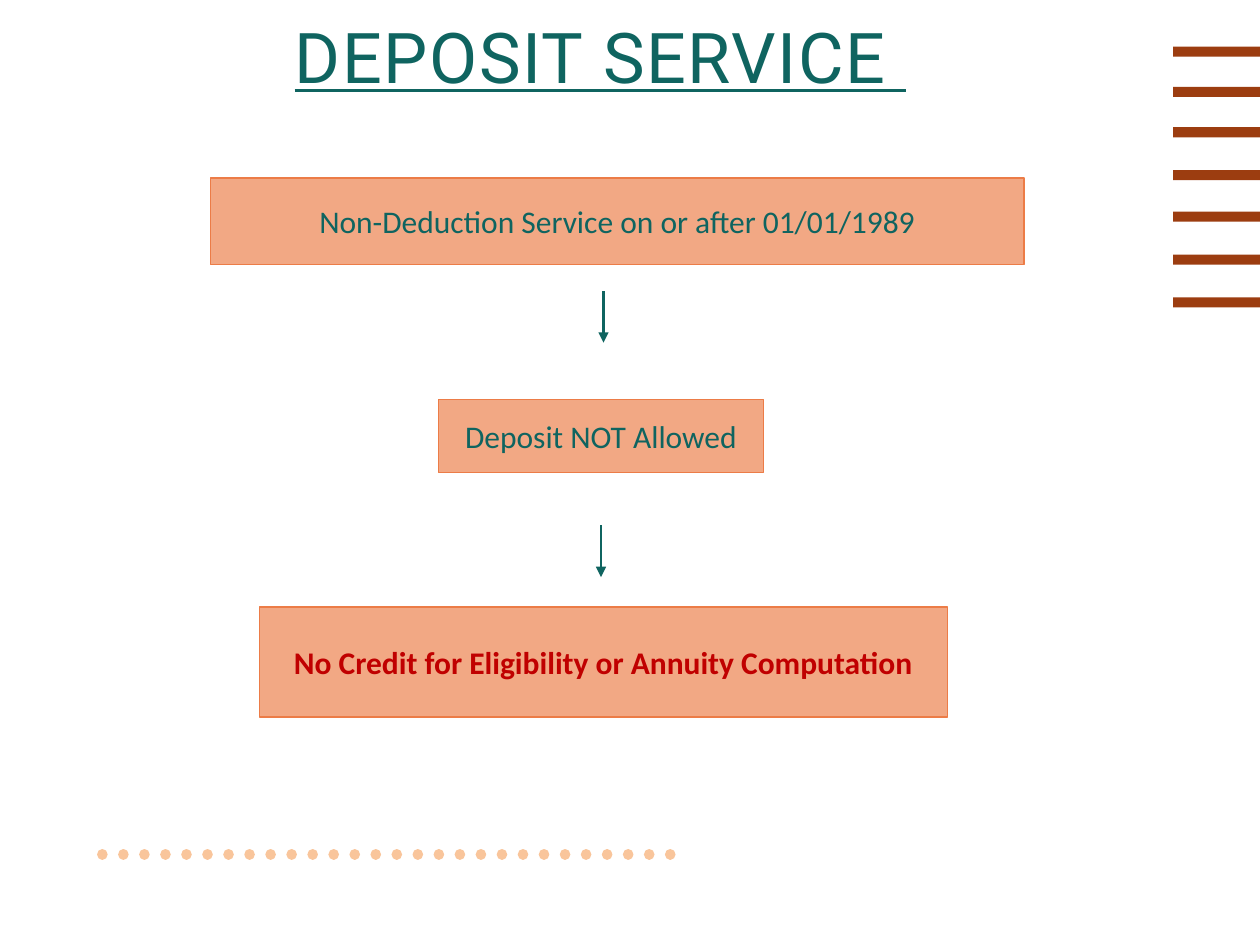
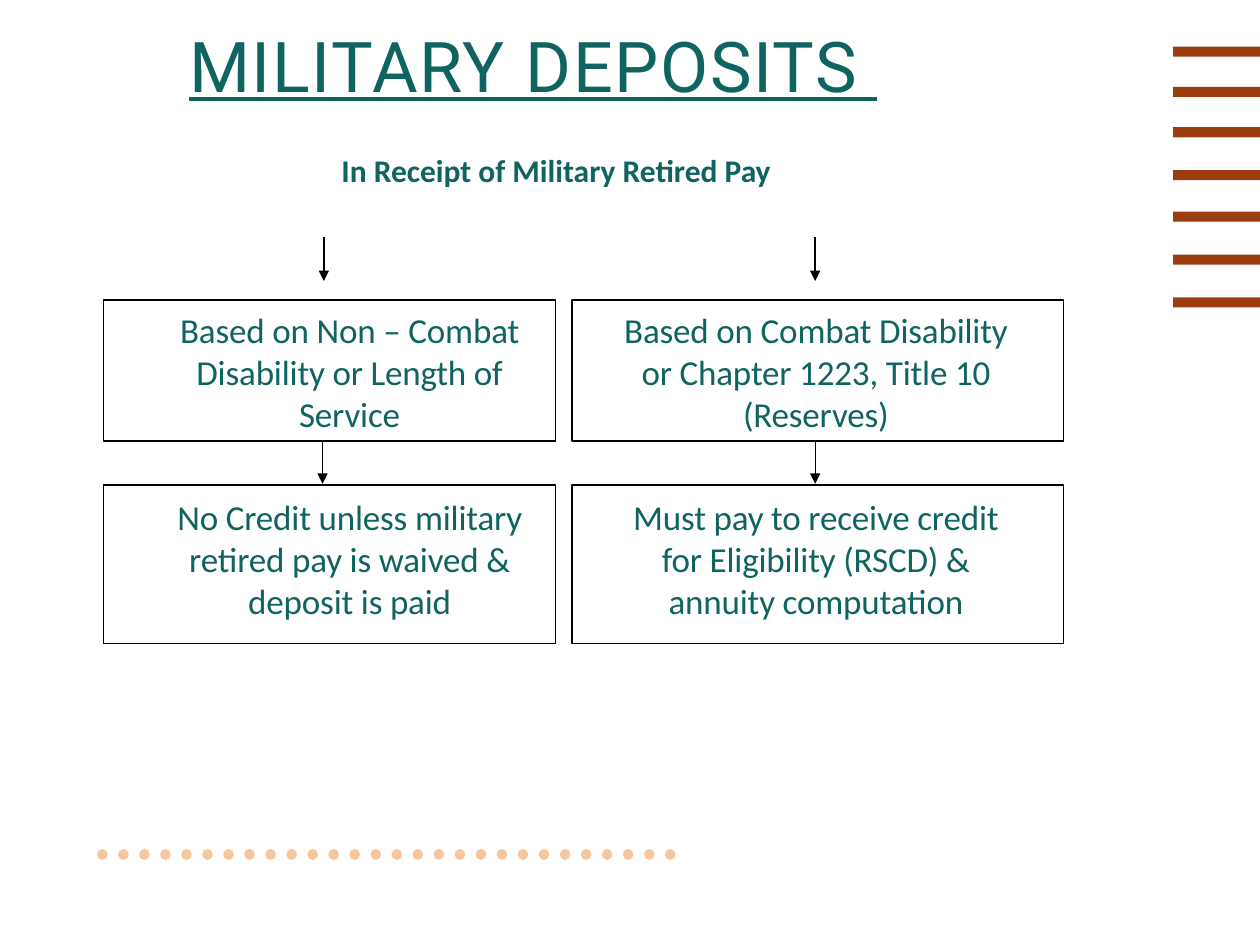
from lxml import etree
from pptx import Presentation
from pptx.dml.color import RGBColor
from pptx.enum import dml, shapes, text
from pptx.oxml.ns import qn
from pptx.util import Inches, Pt

COLORS = {
    "teal": "0F6460",
    "rust": "9C3D10",
    "peach": "F9C59B",
    "salmon": "F2A884",
    "orange": "EC7C47",
    "red": "C00000",
    "black": "000000",
}
WIDTH, HEIGHT = 10, 7.5
STRIPE_TOPS = [0.37, 0.69, 1.01, 1.35, 1.68, 2.02, 2.36]
STRIPE_LEFT, STRIPE_HEIGHT = 9.31, 0.08
DOTS_Y, DOTS_LEFT, DOTS_RIGHT = 6.78, 0.8, 5.32
TITLE_SIZE = (7.64, 1.19)

STEPS = [
    ("Non-Deduction Service on or after 01/01/1989", (1.67, 1.41, 6.46, 0.69), "teal", False),
    ("Deposit NOT Allowed", (3.48, 3.17, 2.58, 0.58), "teal", False),
    ("No Credit for Eligibility or Annuity Computation", (2.06, 4.82, 5.46, 0.87), "red", True),
]
STEP_ARROWS = [(4.79, 2.31, 2.72), (4.77, 4.17, 4.58)]

HEADING = ("In Receipt of Military Retired Pay", (1.91, 1.13, 5.01, 0.4))
COLUMNS = [(0.82, 3.59), (4.54, 3.9)]
ROWS = [(2.38, 1.12), (3.85, 1.26)]
CASES = [
    (["Based on Non – Combat", "Disability or Length of", "Service"], (1.01, 2.38, 3.53, 1.11)),
    (["Based on Combat Disability", "or Chapter 1223, Title 10", "(Reserves)"], (4.8, 2.38, 3.35, 1.11)),
    (["No Credit unless military", "retired pay is waived &", "deposit is paid"], (1.08, 3.86, 3.39, 1.11)),
    (["Must pay to receive credit", "for Eligibility (RSCD) &", "annuity computation"], (4.78, 3.86, 3.39, 1.11)),
]
CASE_ARROWS = [
    (2.57, 1.88, 2.23, 1),
    (6.47, 1.88, 2.23, 1),
    (2.56, 3.51, 3.84, 0.75),
    (6.47, 3.49, 3.84, 0.75),
]


def rgb(name):
    return RGBColor.from_string(COLORS[name])


def inches(values):
    return [Inches(value) for value in values]


def add_box(slide, place, fill=None, line=None, line_width=1):
    shape = slide.shapes.add_shape(shapes.MSO_SHAPE.RECTANGLE, *inches(place))
    shape.shadow.inherit = False
    if fill:
        shape.fill.solid()
        shape.fill.fore_color.rgb = rgb(fill)
    else:
        shape.fill.background()
    if line:
        shape.line.color.rgb = rgb(line)
        shape.line.width = Pt(line_width)
    else:
        shape.line.fill.background()
    return shape


def write(shape, words, size, color="teal", bold=False, font="Calibri", spacing=0, middle=False):
    frame = shape.text_frame
    frame.word_wrap = True
    frame.margin_top = Inches(0.05 if middle else 0.07)
    frame.vertical_anchor = text.MSO_ANCHOR.MIDDLE if middle else text.MSO_ANCHOR.TOP
    paragraph = frame.paragraphs[0]
    paragraph.text = words
    paragraph.alignment = text.PP_ALIGN.CENTER
    paragraph.font.name = font
    paragraph.font.size = Pt(size)
    paragraph.font.bold = bold
    paragraph.font.color.rgb = rgb(color)
    for run in paragraph.runs:
        if spacing:
            run.font._element.set("spc", str(round(spacing * 100)))
    return paragraph


def add_text(slide, words, place, size, **style):
    return write(slide.shapes.add_textbox(*inches(place)), words, size, **style)


def add_line(slide, start, end, color, width):
    connector = slide.shapes.add_connector(shapes.MSO_CONNECTOR.STRAIGHT, *inches(start + end))
    connector.line.color.rgb = rgb(color)
    connector.line.width = Pt(width)
    etree.SubElement(connector._element.spPr, qn("a:effectLst"))
    return connector


def add_arrow(slide, x, top, bottom, color, width):
    connector = add_line(slide, (x, top), (x, bottom), color, width)
    etree.SubElement(connector.get_or_add_ln(), qn("a:tailEnd"), type="triangle")


def add_base_slide(presentation, title, left, top):
    slide = presentation.slides.add_slide(presentation.slide_layouts[6])
    for stripe_top in STRIPE_TOPS:
        add_box(slide, (STRIPE_LEFT, stripe_top, WIDTH - STRIPE_LEFT, STRIPE_HEIGHT), "rust")
    dots = add_line(slide, (DOTS_RIGHT, DOTS_Y), (DOTS_LEFT, DOTS_Y), "peach", 6)
    dots.line.dash_style = dml.MSO_LINE.ROUND_DOT
    dots.get_or_add_ln().set("cap", "rnd")
    paragraph = add_text(slide, title + " \v", (left, top, *TITLE_SIZE), 40,
                         font="Roboto", spacing=1, middle=True)
    paragraph.line_spacing = 0.9
    for run in paragraph.runs:
        run.font.underline = True
        run.font.size = Pt(40)
    return slide


def add_deposit_service(presentation):
    slide = add_base_slide(presentation, "DEPOSIT SERVICE", 0.95, 0.22)
    for words, place, color, bold in STEPS:
        step = add_box(slide, place, "salmon", "orange")
        write(step, words, 18, color=color, bold=bold, middle=True)
    for x, top, bottom in STEP_ARROWS:
        add_arrow(slide, x, top, bottom, "teal", 1.5)


def add_military_deposits(presentation):
    slide = add_base_slide(presentation, "MILITARY DEPOSITS", 0.42, 0.29)
    add_text(slide, *HEADING, 18, bold=True)
    for top, height in ROWS:
        for left, width in COLUMNS:
            add_box(slide, (left, top, width, height), line="black", line_width=0.75)
    for lines, place in CASES:
        add_text(slide, "\v".join(lines), place, 20, spacing=-0.1)
    for x, top, bottom, width in CASE_ARROWS:
        add_arrow(slide, x, top, bottom, "black", width)


def main():
    presentation = Presentation()
    presentation.slide_width, presentation.slide_height = inches((WIDTH, HEIGHT))
    add_deposit_service(presentation)
    add_military_deposits(presentation)
    presentation.save("out.pptx")


if __name__ == "__main__":
    main()
